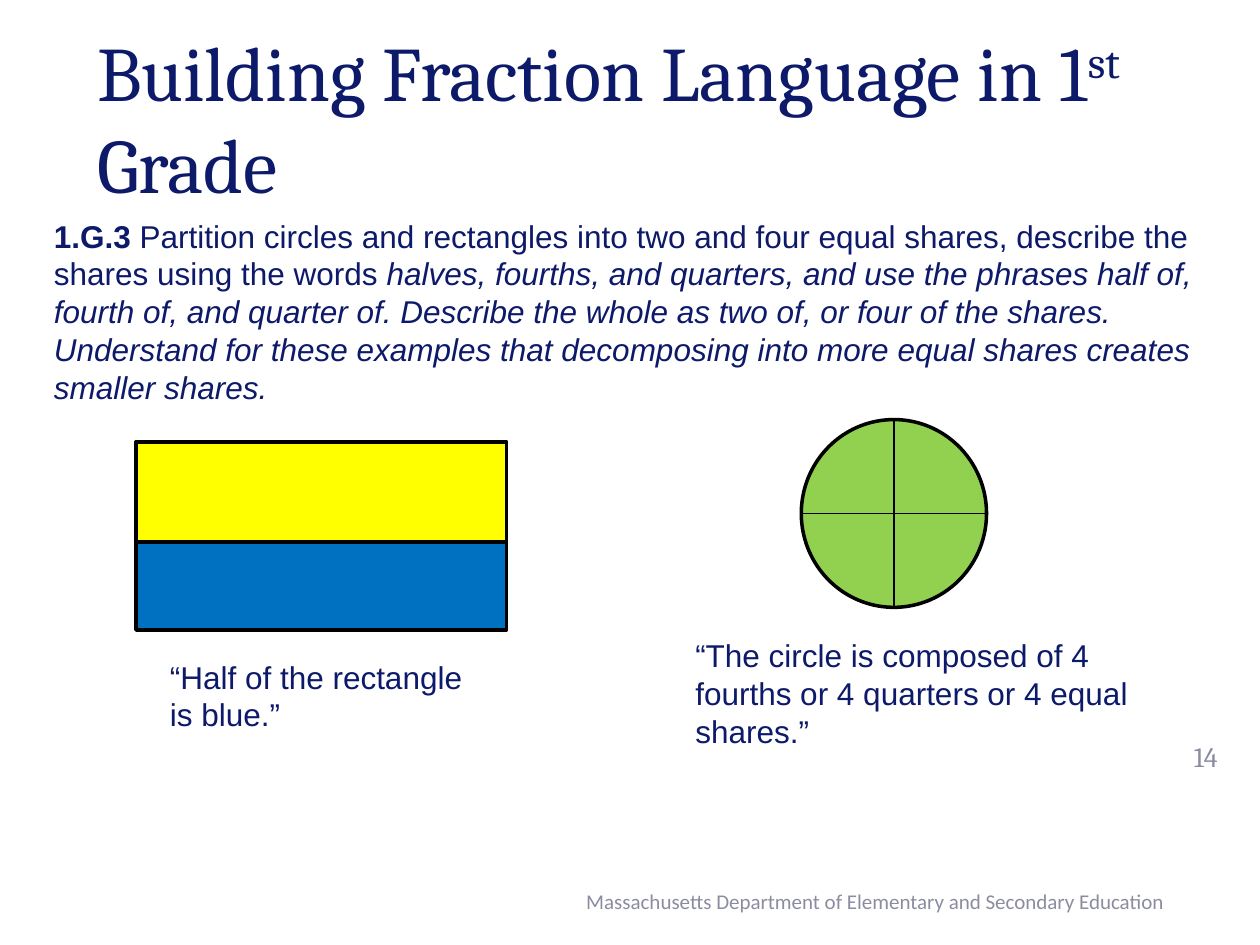
from lxml import etree
from pptx import Presentation
from pptx.dml.color import RGBColor
from pptx.enum import shapes, text
from pptx.oxml.ns import qn
from pptx.util import Inches, Pt

NAVY = RGBColor(0x0D, 0x19, 0x69)
GRAY = RGBColor(0x8C, 0x8C, 0xA1)
BLACK = RGBColor(0, 0, 0)
BLUE = RGBColor(0x00, 0x70, 0xC0)
YELLOW = RGBColor(0xFF, 0xFF, 0x00)
GREEN = RGBColor(0x92, 0xD0, 0x50)
LEFT, CENTER, RIGHT = text.PP_ALIGN.LEFT, text.PP_ALIGN.CENTER, text.PP_ALIGN.RIGHT
TOP, MIDDLE = text.MSO_ANCHOR.TOP, text.MSO_ANCHOR.MIDDLE


def write_text(shape, runs, name, size, color, alignment, anchor):
    frame = shape.text_frame
    frame.word_wrap = True
    frame.auto_size = text.MSO_AUTO_SIZE.NONE
    frame.vertical_anchor = anchor
    paragraph = frame.paragraphs[0]
    paragraph.alignment = alignment
    for words, extra in runs:
        run = paragraph.add_run()
        run.text = words
        formats = {"name": name, "size": Pt(size), **extra}
        for attribute, value in formats.items():
            setattr(run.font, attribute, value)
        run.font.color.rgb = color
    return paragraph


presentation = Presentation()
presentation.slide_width, presentation.slide_height = Inches(10), Inches(7.5)
slide = presentation.slides.add_slide(presentation.slide_layouts[5])

title = slide.shapes.title
title.left, title.top, title.width, title.height = map(Inches, (0.67, 0.3, 8.67, 1.25))
title_runs = [("Building Fraction Language in 1", {}), ("st", {}), (" Grade", {})]
heading = write_text(title, title_runs, "Cambria", 44, NAVY, LEFT, MIDDLE)
heading.runs[1]._r.get_or_add_rPr().set("baseline", "30000")

standard = [
    ("1.G.3", {"bold": True}),
    (" Partition circles and rectangles into two and four equal shares, "
     "describe the shares using the words ", {}),
    ("halves, fourths, and quarters, and use the phrases half of, fourth of, "
     "and quarter of. Describe the whole as two of, or four of the shares. "
     "Understand for these examples that decomposing into more equal shares "
     "creates smaller shares.", {"italic": True}),
]
footer = [("Massachusetts Department of Elementary and Secondary Education", {})]
circle_caption = [("“The circle is composed of 4 fourths or 4 quarters or 4 equal shares.”", {})]
rectangle_caption = [("“Half of the rectangle is blue.”", {})]

for box, runs, *style in [
    ((3.42, 6.95, 5.92, 0.4), footer, "Calibri", 12, GRAY, RIGHT, MIDDLE),
    ((9.28, 5.75, 0.58, 0.5), [("14", {})], "Cambria", 16, GRAY, CENTER, MIDDLE),
    ((0.33, 1.67, 9.25, 1.62), standard, "Arial", 18, NAVY, LEFT, TOP),
    ((5.42, 5, 3.67, 1.01), circle_caption, "Arial", 18, NAVY, LEFT, TOP),
    ((1.25, 5.17, 2.67, 0.71), rectangle_caption, "Arial", 18, NAVY, LEFT, TOP),
]:
    write_text(slide.shapes.add_textbox(*map(Inches, box)), runs, *style)

circle_left, circle_top, circle_width, circle_height = 6.36, 3.33, 1.47, 1.49
for kind, box, color in [
    (shapes.MSO_SHAPE.RECTANGLE, (1.08, 3.51, 2.94, 1.49), BLUE),
    (shapes.MSO_SHAPE.RECTANGLE, (1.08, 3.51, 2.94, 0.79), YELLOW),
    (shapes.MSO_SHAPE.OVAL, (circle_left, circle_top, circle_width, circle_height), GREEN),
]:
    shape = slide.shapes.add_shape(kind, *map(Inches, box))
    shape.shadow.inherit = False
    shape.fill.solid()
    shape.fill.fore_color.rgb = color
    shape.line.color.rgb = BLACK
    shape.line.width = Pt(2)

center_x = circle_left + circle_width / 2
center_y = circle_top + circle_height / 2
for ends, width in [
    ((center_x, circle_top, center_x, circle_top + circle_height), 1.5),
    ((circle_left, center_y, circle_left + circle_width, center_y), 0.75),
]:
    divider = slide.shapes.add_connector(shapes.MSO_CONNECTOR.STRAIGHT, *map(Inches, ends))
    divider.line.color.rgb = BLACK
    divider.line.width = Pt(width)
    etree.SubElement(divider._element.spPr, qn("a:effectLst"))

presentation.save("out.pptx")
